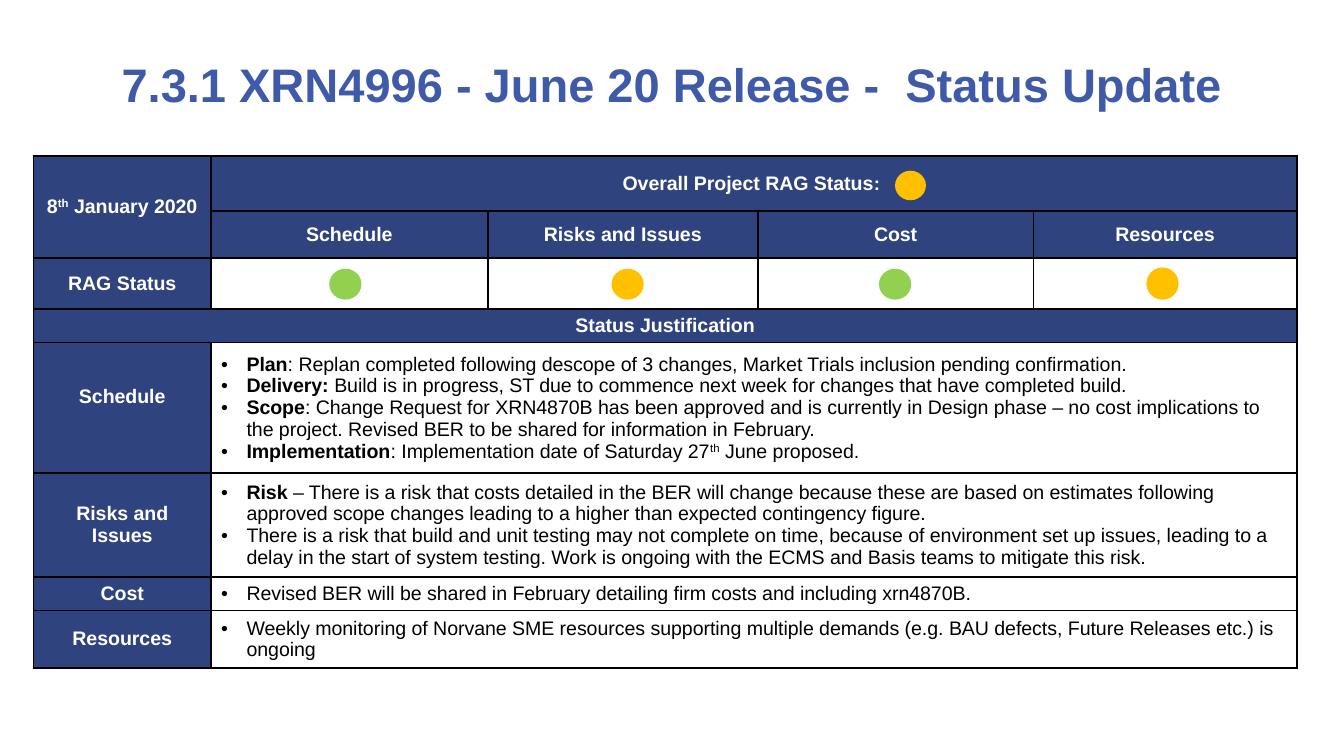
import pptx
import pptx.util
import pptx.dml.color
import pptx.enum.shapes
import pptx.enum.text
import pptx.oxml
import pptx.oxml.ns

Inches, Pt = pptx.util.Inches, pptx.util.Pt
ALIGN = pptx.enum.text.PP_ALIGN
MIDDLE = pptx.enum.text.MSO_ANCHOR.MIDDLE

# Content: a run is (text, style); styles are "b" bold, "" plain, "sup" raised
TITLE = "7.3.1 XRN4996 - June 20 Release -  Status Update"
DATE = [("8", "b"), ("th", "b sup"), (" January 2020", "b")]
OVERALL = [("Overall Project RAG Status", "b"), (": ", "b small")]
AREAS = ["Schedule", "Risks and Issues", "Cost", "Resources"]
JUSTIFICATIONS = {
    "Schedule": [
        [("Plan", "b"), (": Replan completed following descope of 3 changes, "
                         "Market Trials inclusion pending confirmation.", "")],
        [("Delivery:", "b"), (" Build is in progress, ST due to commence next week "
                              "for changes that have completed build.", "")],
        [("Scope", "b"), (": Change Request for XRN4870B has been approved and is "
                          "currently in Design phase – no cost implications to the "
                          "project. Revised BER to be shared for information in "
                          "February.", "")],
        [("Implementation", "b"), (": Implementation date of Saturday 27", ""),
         ("th", "sup"), (" June proposed.", "")],
    ],
    "Risks and Issues": [
        [("Risk", "b"), (" – There is a risk that costs detailed in the BER will "
                         "change because these are based on estimates following "
                         "approved scope changes leading to a higher than expected "
                         "contingency figure.", "")],
        [("There is a risk that build and unit testing may not complete on time, "
          "because of environment set up issues, leading to a delay in the start of "
          "system testing. Work is ongoing with the ECMS and Basis teams to mitigate "
          "this risk.", "")],
    ],
    "Cost": [
        [("Revised BER will be shared in February detailing firm costs and "
          "including xrn4870B.", "")],
    ],
    "Resources": [
        [("Weekly monitoring of Norvane SME resources supporting multiple demands "
          "(e.g. BAU defects, Future Releases etc.) is ongoing", "")],
    ],
}

NAVY, BLUE, WHITE, BLACK = "2F447E", "3E5AA8", "FFFFFF", "000000"
AMBER, GREEN = "FFC000", "92D050"
COLUMNS = [1.32, 2.06, 2.01, 2.05, 1.96]
ROWS = [0.41, 0.35, 0.38, 0.24, 0.97, 0.43, 0.25, 0.31]
TABLE_HEIGHT = 3.81  # leaves room for the rows that grow with their text
# Status lights: left, top, width, height, colour
LIGHTS = [
    (6.66, 1.27, 0.23, 0.22, AMBER),
    (2.45, 2.0, 0.24, 0.23, GREEN),
    (4.55, 2.0, 0.24, 0.23, AMBER),
    (6.54, 2.0, 0.24, 0.23, GREEN),
    (8.53, 1.99, 0.24, 0.24, AMBER),
]


def rgb(value):
    return pptx.dml.color.RGBColor.from_string(value)


def format_font(font, size, color, bold):
    font.name, font.size, font.bold = "Arial", Pt(size), bold
    font.color.rgb = rgb(color)


def add_runs(paragraph, runs, color):
    for text, style in runs:
        run = paragraph.add_run()
        run.text = text
        styles = style.split()
        format_font(run.font, 10 if "small" in styles else 10.5, color, "b" in styles)
        if "sup" in styles:
            run.font._element.set("baseline", "30000")


def add_bullet(paragraph):
    properties = paragraph._p.get_or_add_pPr()
    properties.set("marL", str(Inches(0.19)))
    properties.set("indent", str(Inches(-0.19)))
    namespace = pptx.oxml.ns.nsdecls("a")
    properties.append(pptx.oxml.parse_xml(f'<a:buFont {namespace} typeface="Arial"/>'))
    properties.append(pptx.oxml.parse_xml(f'<a:buChar {namespace} char="•"/>'))


def style_cell(cell):
    cell.vertical_anchor = MIDDLE
    cell.margin_left = cell.margin_right = Pt(5.4)
    cell.margin_top = cell.margin_bottom = Pt(2.7)
    properties = cell._tc.get_or_add_tcPr()
    for side in ("lnL", "lnR", "lnT", "lnB"):
        properties.append(pptx.oxml.parse_xml(
            f'<a:{side} {pptx.oxml.ns.nsdecls("a")} w="{Pt(1)}"><a:solidFill>'
            f'<a:srgbClr val="{BLACK}"/></a:solidFill></a:{side}>'))
    cell.fill.background()


def fill_header(cell, runs):
    cell.fill.solid()
    cell.fill.fore_color.rgb = rgb(NAVY)
    paragraph = cell.text_frame.paragraphs[0]
    paragraph.alignment = ALIGN.CENTER
    add_runs(paragraph, [(runs, "b")] if isinstance(runs, str) else runs, WHITE)


def fill_bullets(cell, bullets):
    frame = cell.text_frame
    for index, runs in enumerate(bullets):
        paragraph = frame.add_paragraph() if index else frame.paragraphs[0]
        add_bullet(paragraph)
        add_runs(paragraph, runs, BLACK)


# Widescreen slide, 16:9
deck = pptx.Presentation()
deck.slide_width = Inches(10)
deck.slide_height = deck.slide_width * 9 // 16
slide = deck.slides.add_slide(deck.slide_layouts[6])

# Title
title = slide.shapes.add_textbox(Inches(0.5), Inches(0.27), Inches(9), Inches(0.7))
title.text_frame.word_wrap = True
title.text_frame.vertical_anchor = MIDDLE
title.text_frame.text = TITLE
heading = title.text_frame.paragraphs[0]
heading.alignment = ALIGN.CENTER
format_font(heading.runs[0].font, 25.2, BLUE, True)

# Table grid
status_frame = slide.shapes.add_table(
    len(ROWS), len(COLUMNS), Inches(0.25), Inches(1.16),
    Inches(sum(COLUMNS)), Inches(TABLE_HEIGHT))
status = status_frame.table
for column, width in zip(status.columns, COLUMNS):
    column.width = Inches(width)
for row, height in zip(status.rows, ROWS):
    row.height = Inches(height)
status_frame.height = Inches(TABLE_HEIGHT)
for cell in status.iter_cells():
    style_cell(cell)

# Status header
last = len(COLUMNS) - 1
status.cell(0, 0).merge(status.cell(1, 0))
status.cell(0, 1).merge(status.cell(0, last))
status.cell(3, 0).merge(status.cell(3, last))
fill_header(status.cell(0, 0), DATE)
fill_header(status.cell(0, 1), OVERALL)
fill_header(status.cell(2, 0), "RAG Status")
fill_header(status.cell(3, 0), "Status Justification")

# Areas: a heading column above and a justification row below
for index, area in enumerate(AREAS):
    fill_header(status.cell(1, index + 1), area)
    row = index + 4
    status.cell(row, 1).merge(status.cell(row, last))
    fill_header(status.cell(row, 0), area)
    fill_bullets(status.cell(row, 1), JUSTIFICATIONS[area])

# The schedule label sits a little above the middle
status.cell(4, 0).margin_bottom = Inches(0.2)

# Status lights
for left, top, width, height, color in LIGHTS:
    light = slide.shapes.add_shape(
        pptx.enum.shapes.MSO_SHAPE.OVAL,
        Inches(left), Inches(top), Inches(width), Inches(height))
    light.shadow.inherit = False
    light.fill.solid()
    light.fill.fore_color.rgb = rgb(color)
    light.line.fill.background()

deck.save("out.pptx")
